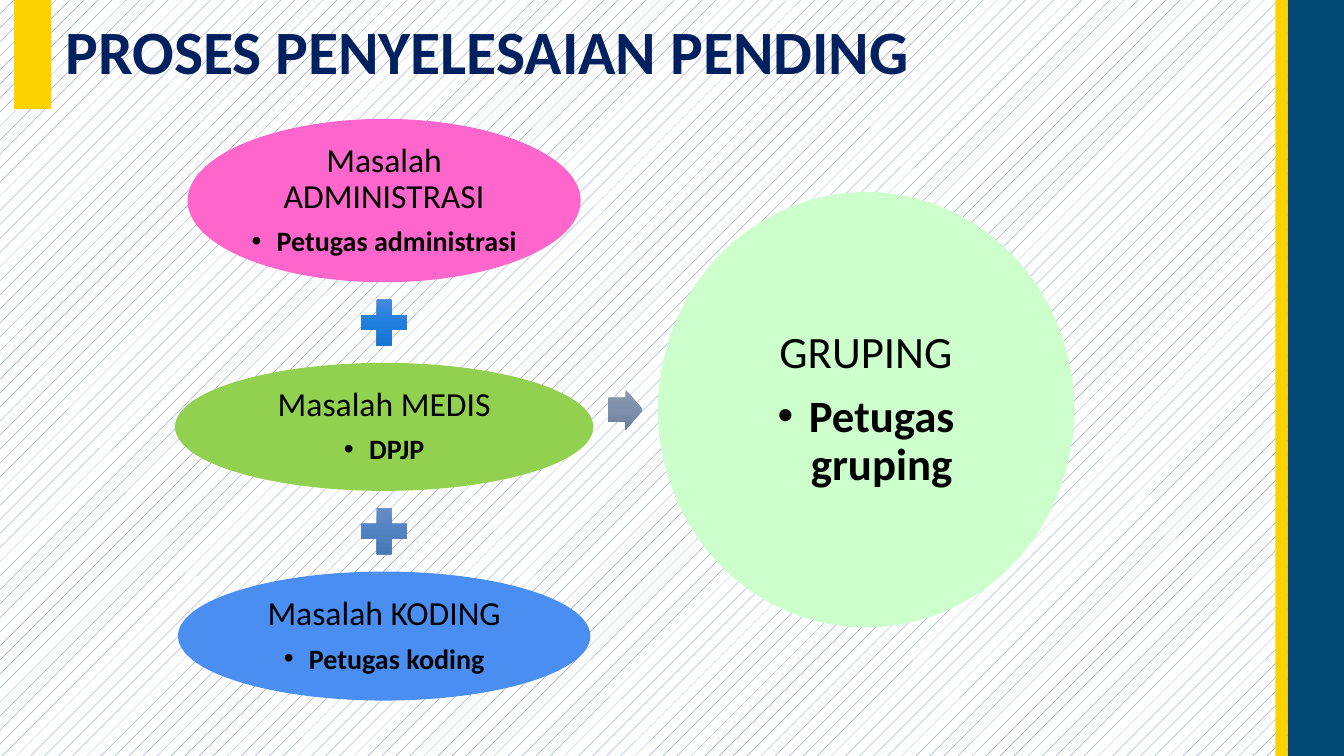
"""Build the slide on how pending claims are resolved."""
from copy import deepcopy

from lxml import etree
from pptx import Presentation
from pptx.dml.color import RGBColor
from pptx.enum.dml import MSO_PATTERN
from pptx.enum.shapes import MSO_SHAPE
from pptx.enum.text import MSO_ANCHOR, MSO_AUTO_SIZE, PP_ALIGN
from pptx.oxml.ns import qn
from pptx.util import Inches, Pt

OVAL, PLUS = MSO_SHAPE.OVAL, MSO_SHAPE.MATH_PLUS
ARROW, RECTANGLE = MSO_SHAPE.RIGHT_ARROW, MSO_SHAPE.RECTANGLE
MIDDLE, CENTER, LEFT = MSO_ANCHOR.MIDDLE, PP_ALIGN.CENTER, PP_ALIGN.LEFT

NAVY = RGBColor(0x00, 0x20, 0x60)
TEAL = RGBColor(0x00, 0x49, 0x74)
YELLOW = RGBColor(0xFC, 0xD2, 0x00)
PINK = RGBColor(0xFF, 0x66, 0xCC)
GREEN = RGBColor(0x92, 0xD0, 0x50)
BLUE = RGBColor(0x4A, 0x8E, 0xF2)
MINT = RGBColor(0xCC, 0xFF, 0xCC)
INDIGO = RGBColor(0x4A, 0x66, 0xAC)
WHITE = RGBColor(0xFF, 0xFF, 0xFF)
BLACK = RGBColor(0x00, 0x00, 0x00)
BRIGHT_BLUES = [RGBColor.from_string(c) for c in ("538DDC", "207FDE", "1571CD")]
SOFT_BLUES = [RGBColor.from_string(c) for c in ("6D91C4", "5183C2", "4274B2")]
GREY_BLUES = [RGBColor.from_string(c) for c in ("8E9BB2", "7D8FAB", "6D7E9A")]

TITLE = "PROSES PENYELESAIAN PENDING"
PROBLEMS = [
    ("Masalah ADMINISTRASI", "Petugas administrasi", PINK, 3.9, 1.62),
    ("Masalah MEDIS", "DPJP", GREEN, 4.15, 1.27),
    ("Masalah KODING", "Petugas koding", BLUE, 4.09, 1.28),
]
PLUS_COLORS = [BRIGHT_BLUES, SOFT_BLUES]
RESULT = ("GRUPING", "Petugas gruping", MINT, 4.13, 4.32)

WIDTH, HEIGHT = 13.33, 7.5
HEADER_HEIGHT = 1.08
BANDS = [
    (12.77, 0.56, HEIGHT, TEAL),
    (12.65, 0.12, HEIGHT, YELLOW),
    (0.14, 0.37, HEADER_HEIGHT, YELLOW),
]
COLUMN_CENTER, COLUMN_TOP = 3.81, 1.18
ROW_GAP, PLUS_SIZE = 0.09, 0.62
ARROW_GAP, ARROW_WIDTH, ARROW_HEIGHT = 0.15, 0.34, 0.4


def apply(target, values):
    for name, value in values.items():
        setattr(target, name, value)


def add_box(page, kind, left, top, width, height, color=None):
    box = page.shapes.add_shape(
        kind, Inches(left), Inches(top), Inches(width), Inches(height))
    box.shadow.inherit = False
    box.line.fill.background()
    if color is not None:
        box.fill.solid()
        box.fill.fore_color.rgb = color
    return box


def shade(box, colors):
    box.fill.gradient()
    box.fill.gradient_angle = 270
    stops = box.element.spPr.find(".//" + qn("a:gsLst"))
    stops.insert(1, deepcopy(stops[0]))
    for stop, color, position in zip(box.fill.gradient_stops, colors, (0, 0.5, 1)):
        apply(stop, {"position": position})
        stop.color.rgb = color


def add_bullet(para, indent):
    properties = para._p.get_or_add_pPr()
    properties.set("marL", str(Inches(indent)))
    properties.set("indent", str(-Inches(indent)))
    etree.SubElement(properties, qn("a:buFont")).set("typeface", "Arial")
    etree.SubElement(properties, qn("a:buChar")).set("char", "•")


def add_oval(page, item, center_x, center_y, head_size, staff_size, indent, inset):
    heading, staff, color, width, height = item
    oval = add_box(page, OVAL, center_x - width / 2, center_y - height / 2,
                   width, height, color)
    frame = oval.text_frame
    sides = ("margin_left", "margin_top", "margin_right", "margin_bottom")
    apply(frame, {side: Inches(inset) for side in sides})
    apply(frame, {"word_wrap": True, "vertical_anchor": MIDDLE})
    lines = [(heading, head_size, False, 0.35), (staff, staff_size, True, 0.15)]
    for number, (text, size, is_staff, share) in enumerate(lines):
        para = frame.add_paragraph() if number else frame.paragraphs[0]
        para.text = text
        if is_staff:
            para.level = 1
            add_bullet(para, indent)
        apply(para, {"alignment": CENTER, "line_spacing": 0.9,
                     "space_after": Pt(size * share)})
        apply(para.font, {"name": "Calibri", "size": Pt(size), "bold": is_staff})
        para.font.color.rgb = BLACK


def add_title(page):
    title = page.shapes.title
    apply(title, {"left": Inches(0.55), "top": 0, "width": Inches(12.5),
                  "height": Inches(HEADER_HEIGHT)})
    frame = title.text_frame
    frame.text = TITLE
    apply(frame, {"vertical_anchor": MIDDLE, "word_wrap": True,
                  "auto_size": MSO_AUTO_SIZE.NONE})
    para = frame.paragraphs[0]
    apply(para, {"alignment": LEFT, "line_spacing": 0.9})
    apply(para.font, {"name": "Calibri", "size": Pt(44), "bold": True})
    para.font.color.rgb = NAVY


def add_process(page):
    top = COLUMN_TOP
    for number, problem in enumerate(PROBLEMS):
        if number:
            plus = add_box(page, PLUS, COLUMN_CENTER - PLUS_SIZE / 2,
                           top + ROW_GAP, PLUS_SIZE, PLUS_SIZE)
            shade(plus, PLUS_COLORS[number - 1])
            top += PLUS_SIZE + 2 * ROW_GAP
        height = problem[-1]
        add_oval(page, problem, COLUMN_CENTER, top + height / 2, 24, 20, 0.25, 0.03)
        top += height

    middle = (COLUMN_TOP + top) / 2
    widest = max(problem[3] for problem in PROBLEMS)
    arrow_left = COLUMN_CENTER + widest / 2 + ARROW_GAP
    arrow = add_box(page, ARROW, arrow_left, middle - ARROW_HEIGHT / 2,
                    ARROW_WIDTH, ARROW_HEIGHT)
    arrow.adjustments[0] = 0.6
    arrow.adjustments[1] = 0.5
    shade(arrow, GREY_BLUES)
    result_left = arrow_left + ARROW_WIDTH + ARROW_GAP
    add_oval(page, RESULT, result_left + RESULT[3] / 2, middle, 32, 32, 0.31, 0.04)


def main():
    deck = Presentation()
    apply(deck, {"slide_width": Inches(WIDTH), "slide_height": Inches(HEIGHT)})
    page = deck.slides.add_slide(deck.slide_layouts[5])
    backdrop = page.background.fill
    backdrop.patterned()
    backdrop.pattern = MSO_PATTERN.PERCENT_5
    backdrop.fore_color.rgb = INDIGO
    backdrop.back_color.rgb = WHITE
    add_title(page)
    add_process(page)
    for left, width, height, color in BANDS:
        add_box(page, RECTANGLE, left, 0, width, height, color)
    deck.save("out.pptx")


if __name__ == "__main__":
    main()
